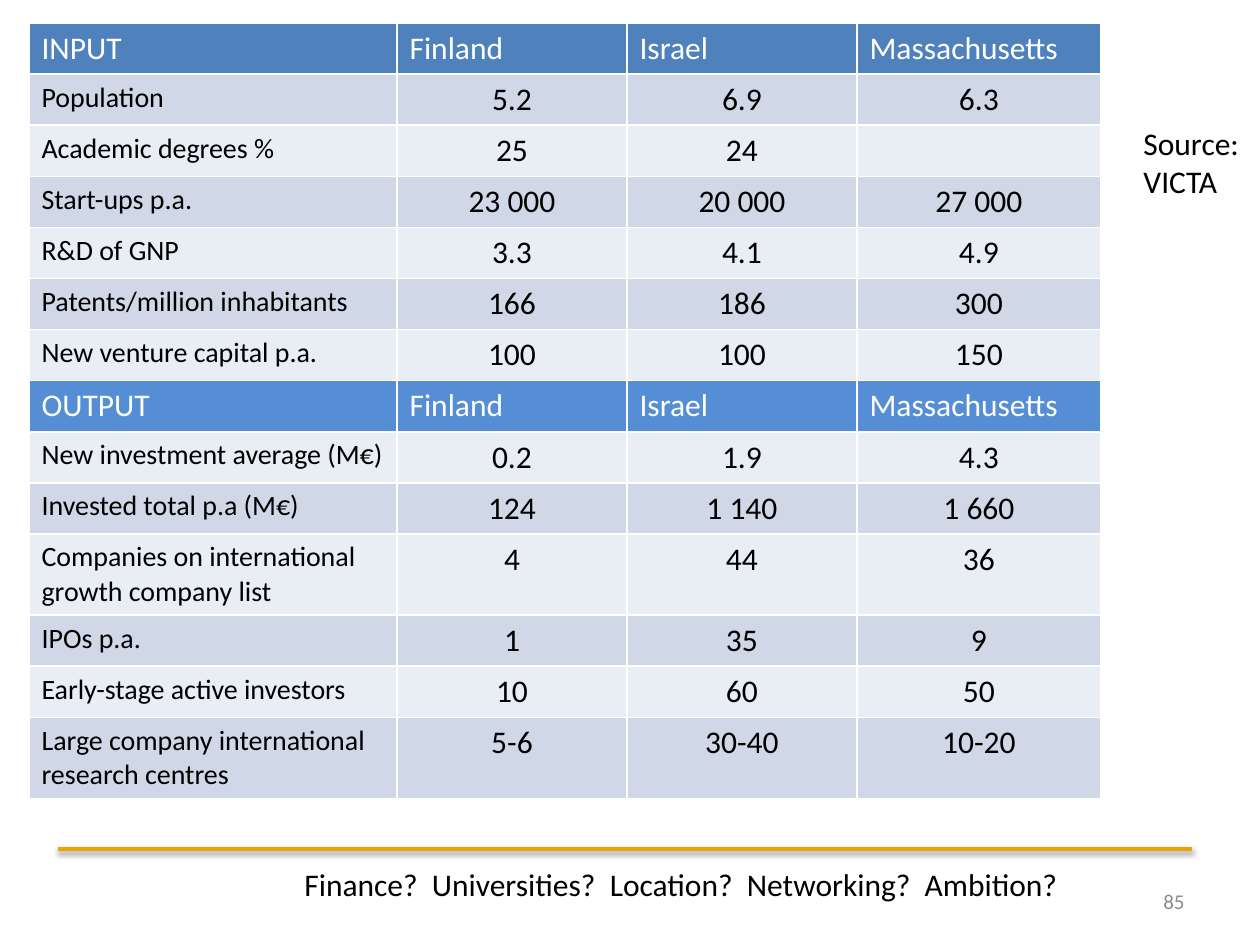
from dataclasses import dataclass

from pptx import Presentation
from pptx import util as u
from pptx.dml.color import RGBColor
from pptx.enum import shapes, text
from pptx.oxml import parse_xml
from pptx.oxml.ns import nsdecls

SCALE = 914400 / 126
FONT = "Calibri"
HUES = {
    "white": "FFFFFF", "black": "000000", "gray": "8C8C8C", "gold": "E9A400",
    "input": "4F81BD", "output": "558ED5", "dark": "D0D8E8", "light": "E9EDF4",
}
ALIGN = text.PP_ALIGN
COLS = [368, 230, 230, 244]
ROW = 51
PLACES = ["Finland", "Israel", "Massachusetts"]
ROWS = [
    ["INPUT", *PLACES],
    ["Population", "5.2", "6.9", "6.3"],
    ["Academic degrees %", "25", "24", ""],
    ["Start-ups p.a.", "23 000", "20 000", "27 000"],
    ["R&D of GNP", "3.3", "4.1", "4.9"],
    ["Patents/million inhabitants", "166", "186", "300"],
    ["New venture capital p.a.", "100", "100", "150"],
    ["OUTPUT", *PLACES],
    ["New investment average (M€)", "0.2", "1.9", "4.3"],
    ["Invested total p.a (M€)", "124", "1 140", "1 660"],
    ["Companies on international growth company list", "4", "44", "36"],
    ["IPOs p.a.", "1", "35", "9"],
    ["Early-stage active investors", "10", "60", "50"],
    ["Large company international research centres", "5-6", "30-40", "10-20"],
]
HEADS = {"INPUT": "input", "OUTPUT": "output"}


@dataclass
class Label:
    left: int
    top: int
    width: int
    height: int
    lines: list[str]
    size: int = 18
    hue: str = "black"
    align: ALIGN = ALIGN.LEFT
    wrap: bool = False
    anchor: text.MSO_ANCHOR = text.MSO_ANCHOR.TOP


LABELS = [
    Label(1131, 118, 122, 89, ["Source:", "VICTA"]),
    Label(292, 859, 789, 50,
          ["Finance?  Universities?  Location?  Networking?  Ambition?"]),
    Label(903, 876, 294, 50, ["85"], 12, "gray", ALIGN.RIGHT, True,
          text.MSO_ANCHOR.MIDDLE),
]


def px(n: int) -> u.Emu:
    return u.Emu(round(n * SCALE))


def rgb(hue: str) -> RGBColor:
    return RGBColor.from_string(HUES[hue])


def write(para, words: str, size: int, hue: str, align: ALIGN) -> None:
    para.alignment = align
    para.font.size = u.Pt(size)
    if not words:
        return
    run = para.add_run()
    run.text = words
    font = run.font
    font.name, font.size, font.bold = FONT, u.Pt(size), False
    font.color.rgb = rgb(hue)


def add_rule(slide) -> None:
    """Draw the gold line with its soft shadow."""
    rule = slide.shapes.add_connector(
        shapes.MSO_CONNECTOR.STRAIGHT, px(58), px(849), px(1192), px(849))
    rule.line.color.rgb = rgb("gold")
    rule.line.width = u.Pt(2)
    rule._element.spPr.append(parse_xml(
        f'<a:effectLst {nsdecls("a")}><a:outerShdw blurRad="40000" '
        'dist="20000" dir="5400000" rotWithShape="0">'
        f'<a:srgbClr val="{HUES["black"]}"><a:alpha val="38000"/></a:srgbClr>'
        '</a:outerShdw></a:effectLst>'))


def add_grid(slide) -> None:
    """Fill the table; its default style supplies the white borders."""
    grid = slide.shapes.add_table(
        len(ROWS), len(COLS), px(29), px(23), px(sum(COLS)),
        px(ROW * len(ROWS))).table
    for col, width in zip(grid.columns, COLS):
        col.width = px(width)
    for i, row in enumerate(ROWS):
        grid.rows[i].height = px(ROW)
        head = HEADS.get(row[0])
        band = head or ("dark" if i % 2 else "light")
        for j, words in enumerate(row):
            cell = grid.cell(i, j)
            cell.fill.solid()
            cell.fill.fore_color.rgb = rgb(band)
            write(cell.text_frame.paragraphs[0], words,
                  18 if head or j else 16,
                  "white" if head else "black",
                  ALIGN.CENTER if j and not head else ALIGN.LEFT)


def add_label(slide, label: Label) -> None:
    box = slide.shapes.add_textbox(
        px(label.left), px(label.top), px(label.width), px(label.height))
    frame = box.text_frame
    frame.word_wrap = label.wrap
    frame.vertical_anchor = label.anchor
    if not label.wrap:
        frame.auto_size = text.MSO_AUTO_SIZE.SHAPE_TO_FIT_TEXT
    for i, line in enumerate(label.lines):
        para = frame.add_paragraph() if i else frame.paragraphs[0]
        write(para, line, label.size, label.hue, label.align)


def main() -> None:
    deck = Presentation()
    deck.slide_width, deck.slide_height = px(1260), px(945)
    slide = deck.slides.add_slide(deck.slide_layouts[6])
    add_rule(slide)
    add_grid(slide)
    for label in LABELS:
        add_label(slide, label)
    deck.save("out.pptx")


if __name__ == "__main__":
    main()
